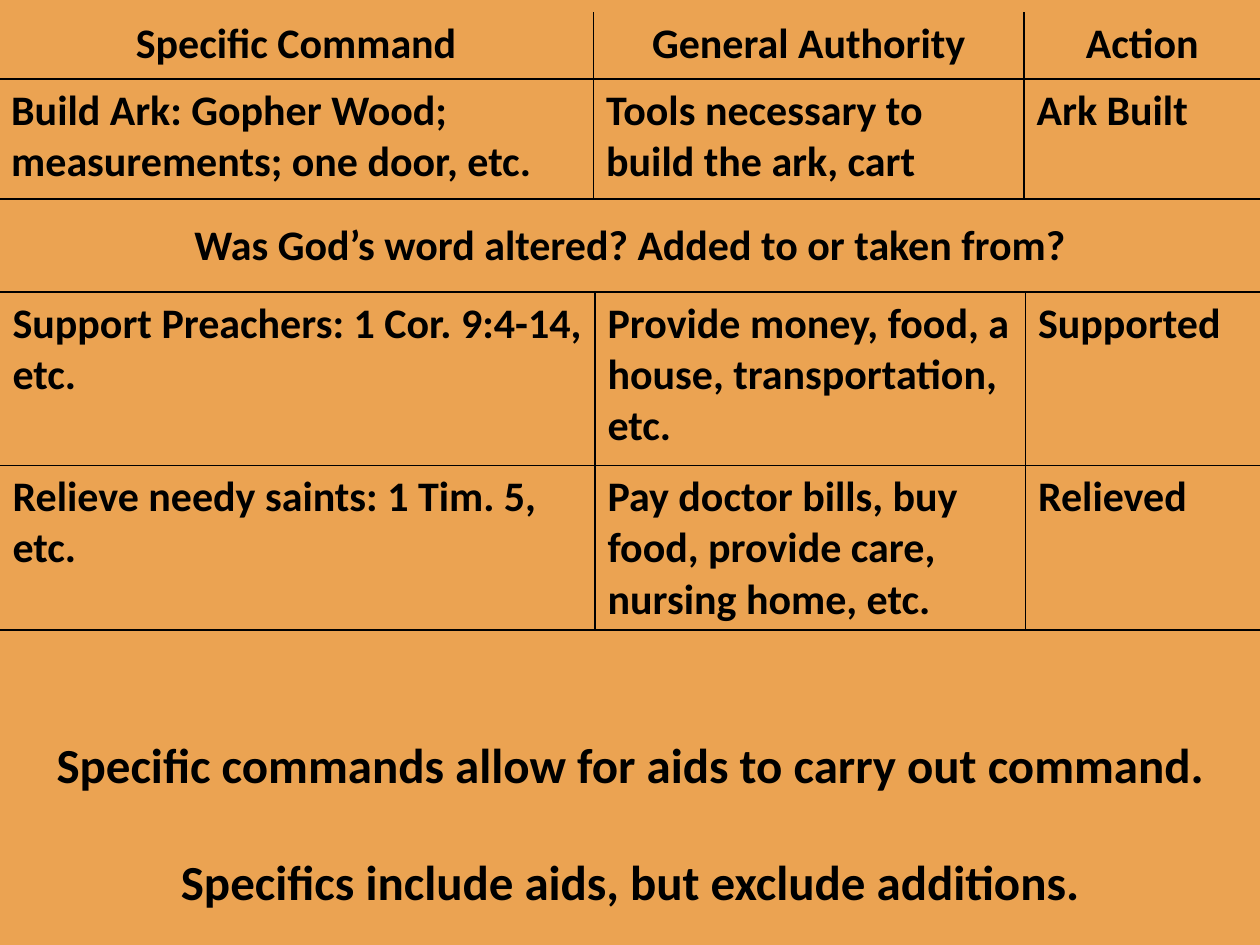
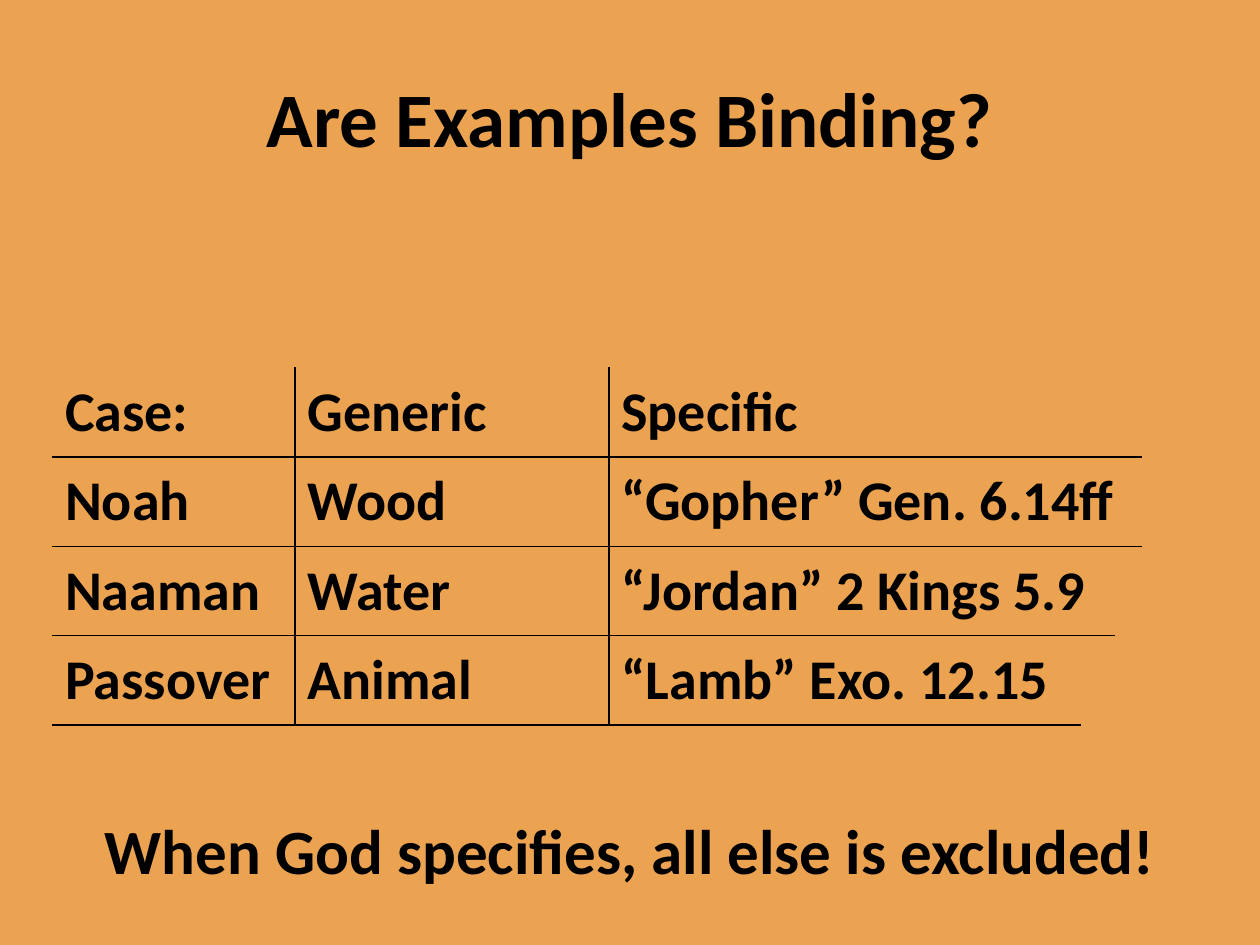
from dataclasses import dataclass
from typing import NamedTuple

from lxml.etree import SubElement
from pptx import Presentation
from pptx.dml.color import RGBColor
from pptx.enum.text import MSO_ANCHOR, PP_ALIGN
from pptx.oxml.ns import qn
from pptx.util import Pt


@dataclass(frozen=True)
class Theme:
    font: str = "Calibri"
    ink: str = "000000"
    ground: str = "EBA352"
    title: int = 44
    closing: int = 36
    case: int = 32
    summary: int = 28
    command: int = 24
    rule: float = 1


class Box(NamedTuple):
    left: float
    top: float
    width: float
    height: float


THEME = Theme()
TITLE_ONLY, BLANK = 5, 6
BORDERS = {"left": "a:lnL", "right": "a:lnR", "top": "a:lnT", "bottom": "a:lnB"}

COMMAND_COLUMNS = (340, 246, 135.2)
HEADINGS = ("Specific Command", "General Authority", "Action")
ARK = ("Build Ark: Gopher Wood; measurements; one door, etc.",
       "Tools necessary to build the ark, cart", "Ark Built")
DUTIES = (
    (99, ("Support Preachers: 1 Cor. 9:4-14, etc.",
          "Provide money, food, a house, transportation, etc.", "Supported")),
    (94, ("Relieve needy saints: 1 Tim. 5, etc.",
          "Pay doctor bills, buy food, provide care, nursing home, etc.", "Relieved")),
)
CASES = (
    (121, ("Case:", "Generic", "Specific")),
    (304.5, ("Noah", "Wood", "“Gopher” Gen. 6.14ff")),
    (289.5, ("Naaman", "Water", "“Jordan” 2 Kings 5.9")),
    (269.5, ("Passover", "Animal", "“Lamb” Exo. 12.15")),
)


def place(shape, box):
    for name, length in box._asdict().items():
        setattr(shape, name, Pt(length))


def write(frame, lines, size, align=PP_ALIGN.CENTER, gap=0):
    frame.word_wrap = True
    for index, line in enumerate(lines):
        para = frame.paragraphs[0] if index == 0 else frame.add_paragraph()
        para.alignment = align
        para.space_before = Pt(gap if index else 0)
        span = para.add_run()
        span.text = line
        for name, value in {"name": THEME.font, "size": Pt(size), "bold": True}.items():
            setattr(span.font, name, value)
        span.font.color.rgb = RGBColor.from_string(THEME.ink)


def add_statement(page, box, lines, size, gap=0):
    shape = page.shapes.add_textbox(*map(Pt, box))
    write(shape.text_frame, lines, size, gap=gap)


def draw_borders(cell, sides):
    properties = cell._tc.get_or_add_tcPr()
    for side, tag in BORDERS.items():
        line = SubElement(properties, qn(tag), w=str(Pt(THEME.rule)))
        if side in sides:
            fill = SubElement(line, qn("a:solidFill"))
            SubElement(fill, qn("a:srgbClr"), val=THEME.ink)
        else:
            SubElement(line, qn("a:noFill"))


def add_strip(page, box, columns, texts, size, header=False,
              align=PP_ALIGN.LEFT, anchor=MSO_ANCHOR.TOP):
    table = page.shapes.add_table(1, len(columns), *map(Pt, box)).table
    table.first_row = table.horz_banding = False
    table.rows[0].height = Pt(box.height)
    last = len(columns) - 1
    for index, (width, text) in enumerate(zip(columns, texts)):
        table.columns[index].width = Pt(width)
        cell = table.cell(0, index)
        cell.vertical_anchor = anchor
        write(cell.text_frame, [text], size, align)
        sides = {"bottom"}
        if not header:
            sides.add("top")
        if index > 0:
            sides.add("left")
        if index < last:
            sides.add("right")
        draw_borders(cell, sides)
        cell.fill.background()


def add_ark_region(page, box):
    heading = box._replace(height=38.2)
    add_strip(page, heading, COMMAND_COLUMNS, HEADINGS, THEME.command,
              header=True, align=PP_ALIGN.CENTER)
    example = box._replace(top=box.top + heading.height, height=box.height - heading.height)
    add_strip(page, example, COMMAND_COLUMNS, ARK, THEME.command)


def add_duties_region(page, box):
    top = box.top
    for height, texts in DUTIES:
        add_strip(page, box._replace(top=top, height=height),
                  COMMAND_COLUMNS, texts, THEME.command)
        top += height


def add_cases_region(page, box):
    height = box.height / len(CASES)
    for index, (last_width, texts) in enumerate(CASES):
        columns = (138.5, 179.5, last_width)
        strip = Box(box.left, box.top + index * height, sum(columns), height)
        add_strip(page, strip, columns, texts, THEME.case,
                  header=index == 0, anchor=MSO_ANCHOR.MIDDLE)


def build_commands_page(deck, box):
    page = deck.slides.add_slide(deck.slide_layouts[BLANK])
    width = sum(COMMAND_COLUMNS)
    add_ark_region(page, Box(box.left - 0.8, box.top + 7, width, 106.6))
    add_statement(page, Box(box.left, box.top + 121.5, box.width, 36),
                  ["Was God’s word altered? Added to or taken from?"], THEME.command)
    add_duties_region(page, Box(box.left, box.top + 167, width, 193))
    add_statement(page, Box(box.left, box.top + 416, box.width, 109),
                  ["Specific commands allow for aids to carry out command.",
                   "Specifics include aids, but exclude additions."],
                  THEME.summary, gap=33.5)


def build_examples_page(deck, box):
    page = deck.slides.add_slide(deck.slide_layouts[TITLE_ONLY])
    title = page.shapes.title
    place(title, Box(box.left + 36, box.top + 21.6, box.width - 72, 90))
    title.text_frame.vertical_anchor = MSO_ANCHOR.MIDDLE
    write(title.text_frame, ["Are Examples Binding?"], THEME.title)
    add_cases_region(page, Box(box.left + 30, box.top + 210, 622.5, 204.4))
    add_statement(page, Box(box.left, box.top + 460, box.width, 51),
                  ["When God specifies, all else is excluded!"], THEME.closing)


def main():
    deck = Presentation()
    area = Box(0, 0, 720, 540)
    deck.slide_width, deck.slide_height = Pt(area.width), Pt(area.height)
    ground = deck.slide_master.background.fill
    ground.solid()
    ground.fore_color.rgb = RGBColor.from_string(THEME.ground)
    build_commands_page(deck, area)
    build_examples_page(deck, area)
    deck.save("out.pptx")


if __name__ == "__main__":
    main()
